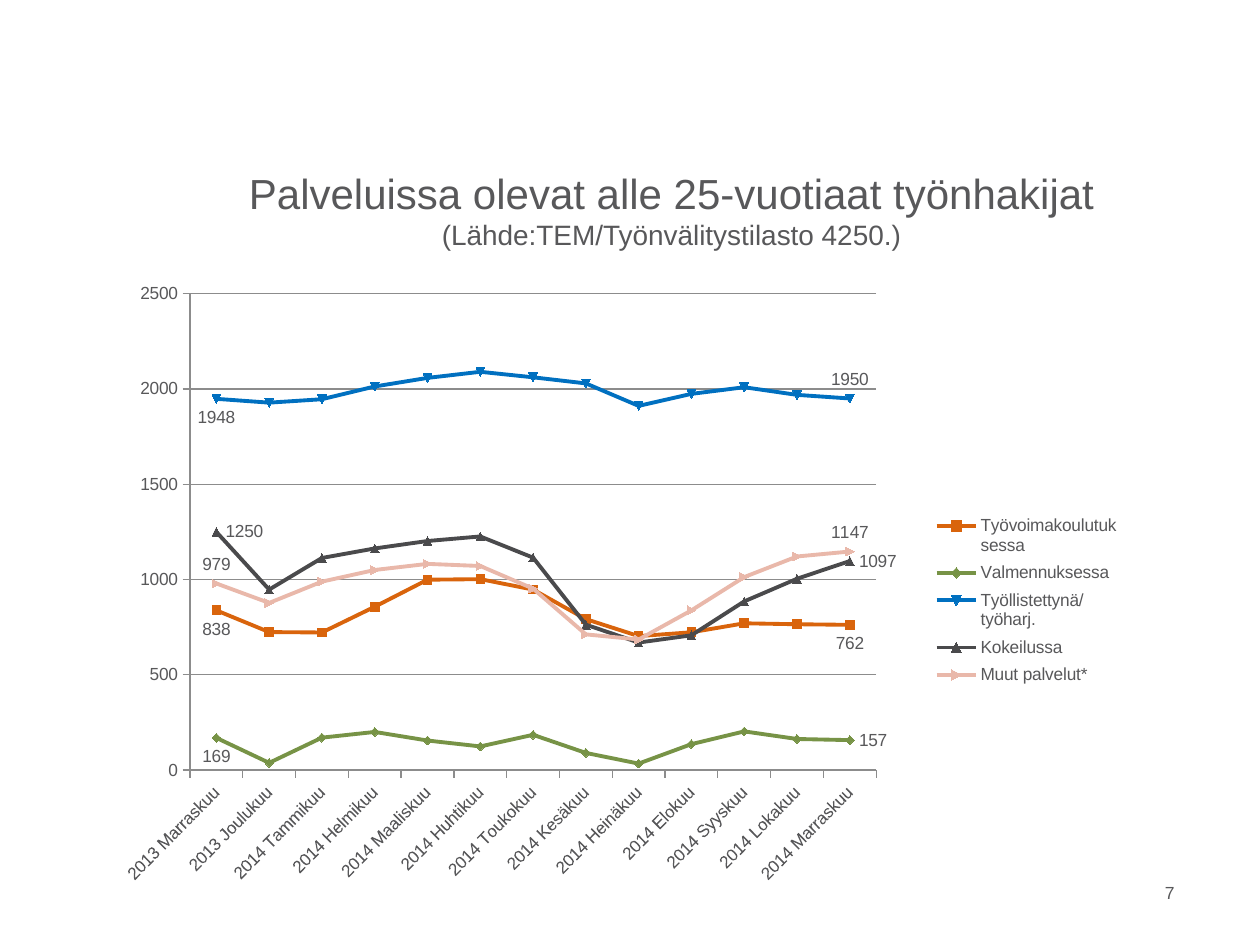
import pptx
import pptx.chart.data
import pptx.dml.color
import pptx.enum.chart
import pptx.enum.text
import pptx.oxml
import pptx.oxml.ns
import pptx.util

Inches = pptx.util.Inches
Pt = pptx.util.Pt
ALIGN = pptx.enum.text.PP_ALIGN
POS = pptx.enum.chart.XL_LABEL_POSITION
GREY = "58585A"
AXIS = "8C8C8C"


def rgb(value):
    return pptx.dml.color.RGBColor.from_string(value)


def add_text(p, text, size=10, color=GREY, font="Arial", align=ALIGN.LEFT):
    p.alignment = align
    r = p.add_run()
    r.text = text
    r.font.size = Pt(size)
    r.font.name = font
    r.font.bold = False
    r.font.color.rgb = rgb(color)


prs = pptx.Presentation()
prs.slide_width, prs.slide_height = Inches(10), Inches(7.5)
s = prs.slides.add_slide(prs.slide_layouts[5])

sp = s.shapes.title
sp.left, sp.top, sp.width, sp.height = Inches(0.83), Inches(1.31), Inches(9), Inches(0.7)
tf = sp.text_frame
tf.vertical_anchor = pptx.enum.text.MSO_ANCHOR.MIDDLE
tf.auto_size = pptx.enum.text.MSO_AUTO_SIZE.NONE
p = tf.paragraphs[0]
add_text(p, "Palveluissa olevat alle 25-vuotiaat työnhakijat", size=24, align=ALIGN.CENTER)
p.add_line_break()
add_text(p, "(Lähde:TEM/Työnvälitystilasto 4250.)", size=16, align=ALIGN.CENTER)

months = ["Tammikuu", "Helmikuu", "Maaliskuu", "Huhtikuu", "Toukokuu", "Kesäkuu",
          "Heinäkuu", "Elokuu", "Syyskuu", "Lokakuu", "Marraskuu"]
series = [
    ("Työvoimakoulutuksessa", "D9640C", POS.BELOW, POS.BELOW,
     [838, 724, 722, 857, 999, 1002, 947, 792, 703, 723, 770, 765, 762]),
    ("Valmennuksessa", "779346", POS.BELOW, POS.RIGHT,
     [169, 38, 170, 200, 155, 124, 185, 90, 34, 136, 203, 163, 157]),
    ("Työllistettynä/työharj.", "0070C0", POS.BELOW, POS.ABOVE,
     [1948, 1928, 1946, 2013, 2058, 2090, 2061, 2029, 1911, 1974, 2009, 1969, 1950]),
    ("Kokeilussa", "4A4A4C", POS.RIGHT, POS.RIGHT,
     [1250, 947, 1113, 1163, 1202, 1226, 1115, 763, 669, 707, 885, 1004, 1097]),
    ("Muut palvelut*", "E9B8AA", POS.ABOVE, POS.ABOVE,
     [979, 877, 989, 1050, 1082, 1071, 952, 712, 685, 838, 1013, 1121, 1147]),
]
data = pptx.chart.data.CategoryChartData()
data.categories = ["2013 Marraskuu", "2013 Joulukuu"] + [f"2014 {m}" for m in months]
for name, color, first, last, values in series:
    data.add_series(name, values)

chart = s.shapes.add_chart(pptx.enum.chart.XL_CHART_TYPE.LINE_MARKERS, Inches(0.98),
                           Inches(2.18), Inches(7.95), Inches(4.88), data).chart
chart.has_title = False
chart.font.size = Pt(10)
chart.font.name = "Arial"
chart.font.color.rgb = rgb(GREY)
chart.has_legend = True
chart.legend.position = pptx.enum.chart.XL_LEGEND_POSITION.RIGHT
chart.legend.include_in_layout = False

for ser, (name, color, first, last, values) in zip(chart.plots[0].series, series):
    ser.smooth = False
    ser.format.line.color.rgb = rgb(color)
    ser.format.line.width = Pt(2.25)
    ser.marker.style = pptx.enum.chart.XL_MARKER_STYLE.AUTOMATIC
    ser.marker.size = 5
    ser.marker.format.fill.solid()
    ser.marker.format.fill.fore_color.rgb = rgb(color)
    ser.marker.format.line.color.rgb = rgb(color)
    ser.data_labels.show_value = False
    for i, position in ((0, first), (len(values) - 1, last)):
        ser.points[i].data_label.position = position

value_axis, category_axis = chart.value_axis, chart.category_axis
value_axis.minimum_scale, value_axis.maximum_scale, value_axis.major_unit = 0, 2500, 500
value_axis.has_major_gridlines = True
value_axis.major_gridlines.format.line.color.rgb = rgb(AXIS)
for axis in (value_axis, category_axis):
    axis.major_tick_mark = pptx.enum.chart.XL_TICK_MARK.OUTSIDE
    axis.format.line.color.rgb = rgb(AXIS)
    axis.tick_labels.font.size = Pt(10)
body = category_axis._element.find(".//" + pptx.oxml.ns.qn("a:bodyPr"))
body.set("rot", "-2700000")
body.set("vert", "horz")

for parent, index, target, box in (
        (chart._chartSpace.chart.plotArea, 0, '<c:layoutTarget val="inner"/>',
         (0.053, 0.031, 0.695, 0.775)),
        (chart.legend._element, 1, "", (0.81, 0.38, 0.19, 0.3))):
    for old in parent.findall(pptx.oxml.ns.qn("c:layout")):
        parent.remove(old)
    modes = '<c:xMode val="edge"/><c:yMode val="edge"/>'
    sizes = "".join(f'<c:{k} val="{v}"/>' for k, v in zip("xywh", box))
    parent.insert(index, pptx.oxml.parse_xml(
        f'<c:layout {pptx.oxml.ns.nsdecls("c")}><c:manualLayout>'
        f'{target}{modes}{sizes}</c:manualLayout></c:layout>'))

sp = s.shapes.add_textbox(Inches(8.98), Inches(6.95), Inches(0.44), Inches(0.4))
tf = sp.text_frame
tf.word_wrap = True
add_text(tf.paragraphs[0], "7", align=ALIGN.RIGHT)

prs.save("out.pptx")
